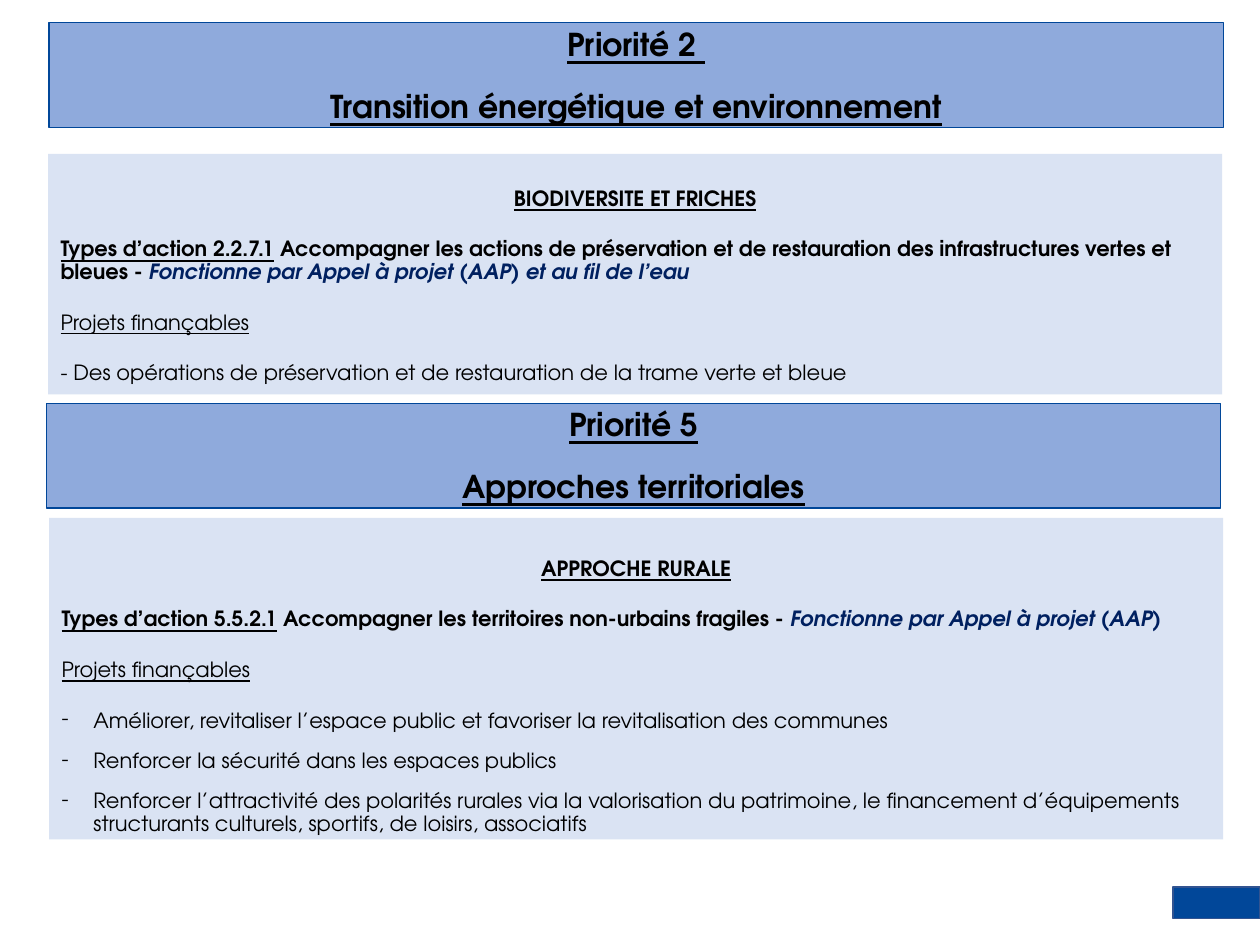
from lxml import etree
from pptx import Presentation
from pptx.dml.color import RGBColor
from pptx.enum.shapes import MSO_SHAPE
from pptx.enum.text import MSO_ANCHOR, MSO_AUTO_SIZE, PP_ALIGN
from pptx.oxml.ns import qn
from pptx.util import Cm, Pt

RECTANGLE = MSO_SHAPE.RECTANGLE
TOP, MIDDLE = MSO_ANCHOR.TOP, MSO_ANCHOR.MIDDLE
LEFT, CENTER = PP_ALIGN.LEFT, PP_ALIGN.CENTER
NO_AUTOFIT = MSO_AUTO_SIZE.NONE

FONT = "TeX Gyre Adventor"
BLACK = RGBColor(0x00, 0x00, 0x00)
NAVY = RGBColor(0x00, 0x20, 0x60)
DEEP_BLUE = RGBColor(0x01, 0x47, 0x99)
EDGE_BLUE = RGBColor(0x32, 0x54, 0x91)
HEADING_BLUE = RGBColor(0x8F, 0xAA, 0xDC)
PANEL_BLUE = RGBColor(0xDA, 0xE3, 0xF3)

BAND_WIDTH = 23.67
HEADING_HEIGHT = 2.11
DASH_INDENT = 0.64


def add_rectangle(slide):
    """Add a plain rectangle without shadow."""
    rectangle = slide.shapes.add_shape(RECTANGLE, 0, 0, Cm(1), Cm(1))
    rectangle.shadow.inherit = False
    return rectangle


def place_box(box, left, top, width, height, fill, edge=None, edge_width=0.75):
    """Move a box, given in centimetres, and colour it."""
    box.left, box.top, box.width, box.height = map(Cm, (left, top, width, height))
    box.fill.solid()
    box.fill.fore_color.rgb = fill
    if edge is None:
        box.line.fill.background()
    else:
        box.line.color.rgb = edge
        box.line.width = Pt(edge_width)


def prepare_frame(box, anchor, top_inset):
    """Empty the text frame of a box and set how it holds its text."""
    frame = box.text_frame
    frame.clear()
    frame.word_wrap = True
    frame.auto_size = NO_AUTOFIT
    frame.vertical_anchor = anchor
    frame.margin_left = frame.margin_right = Cm(0.25)
    frame.margin_top, frame.margin_bottom = Cm(top_inset), Cm(0.13)
    return frame


def write(frame, *parts, size=12, align=LEFT, dash=False, after=6):
    """Write one paragraph from (text, font settings) parts."""
    first = not frame.paragraphs[0].runs
    paragraph = frame.paragraphs[0] if first else frame.add_paragraph()
    properties = paragraph._p.get_or_add_pPr()
    indent = Cm(DASH_INDENT) if dash else 0
    properties.set("marL", str(indent))
    properties.set("indent", str(-indent))
    if dash:
        etree.SubElement(properties, qn("a:buFont")).set("typeface", FONT)
        etree.SubElement(properties, qn("a:buChar")).set("char", "-")
    else:
        etree.SubElement(properties, qn("a:buNone"))
    paragraph.alignment = align
    paragraph.line_spacing = 0.9
    paragraph.space_before = Pt(0 if first else 10)
    paragraph.space_after = Pt(after)
    for text, settings in parts:
        run = paragraph.add_run()
        run.text = text
        font = run.font
        font.name, font.size = FONT, Pt(size)
        font.bold = settings.get("bold", False)
        font.italic = settings.get("italic", False)
        font.underline = settings.get("underline", False)
        font.color.rgb = settings.get("color", BLACK)


def fill_heading(box, left, top, lines):
    """Fill a priority band with its number and its name."""
    place_box(box, left, top, BAND_WIDTH, HEADING_HEIGHT, HEADING_BLUE, DEEP_BLUE)
    frame = prepare_frame(box, MIDDLE, 0.2)
    for line in lines:
        after = 0 if line == lines[-1] else 6
        write(frame, (line, dict(bold=True, underline=True)),
              size=18, align=CENTER, after=after)


def fill_panel(box, left, top, height, top_inset, theme, action, mode, projects, dash):
    """Fill a panel with its theme, type of action and fundable projects."""
    place_box(box, left, top, BAND_WIDTH, height, PANEL_BLUE)
    frame = prepare_frame(box, TOP, top_inset)
    code, aim = action
    write(frame, (theme, dict(bold=True, underline=True)), align=CENTER)
    write(frame,
          (code, dict(bold=True, underline=True)),
          (aim, dict(bold=True)),
          (mode, dict(bold=True, italic=True, color=NAVY)))
    write(frame, ("Projets finançables", dict(underline=True)))
    for project in projects:
        write(frame, (project, {}), dash=dash, after=0)


def add_corner_bar(slide, left, top, width, height):
    """Add the blue bar at the lower right edge."""
    place_box(add_rectangle(slide), left, top, width, height, DEEP_BLUE, EDGE_BLUE, 1)


def main():
    """Build the slide and save it."""
    deck = Presentation()
    deck.slide_width, deck.slide_height = Cm(25.4), Cm(19.05)
    slide = deck.slides.add_slide(deck.slide_layouts.get_by_name("Two Content"))
    title, biodiversity, rural = list(slide.placeholders)[:3]

    add_corner_bar(slide, 23.65, 17.88, 1.75, 0.64)
    fill_heading(title, 0.99, 0.46,
                 ["Priorité 2 ", "Transition énergétique et environnement"])
    fill_panel(
        biodiversity, 0.97, 3.1, 4.85, 0.69, "BIODIVERSITE ET FRICHES",
        ("Types d’action 2.2.7.1",
         " Accompagner les actions de préservation et de restauration "
         "des infrastructures vertes et bleues - "),
        "Fonctionne par Appel à projet (AAP) et au fil de l’eau",
        ["- Des opérations de préservation et de restauration de la trame verte et bleue"],
        dash=False)
    fill_heading(add_rectangle(slide), 0.94, 8.13,
                 ["Priorité 5", "Approches territoriales"])
    fill_panel(
        rural, 0.99, 10.44, 6.48, 0.81, "APPROCHE RURALE",
        ("Types d’action 5.5.2.1",
         " Accompagner les territoires non-urbains fragiles - "),
        "Fonctionne par Appel à projet (AAP)",
        ["Améliorer, revitaliser l’espace public et favoriser la revitalisation des communes",
         "Renforcer la sécurité dans les espaces publics",
         "Renforcer l’attractivité des polarités rurales via la valorisation du patrimoine, "
         "le financement d’équipements structurants culturels, sportifs, de loisirs, "
         "associatifs"],
        dash=True)
    deck.save("out.pptx")


if __name__ == "__main__":
    main()
